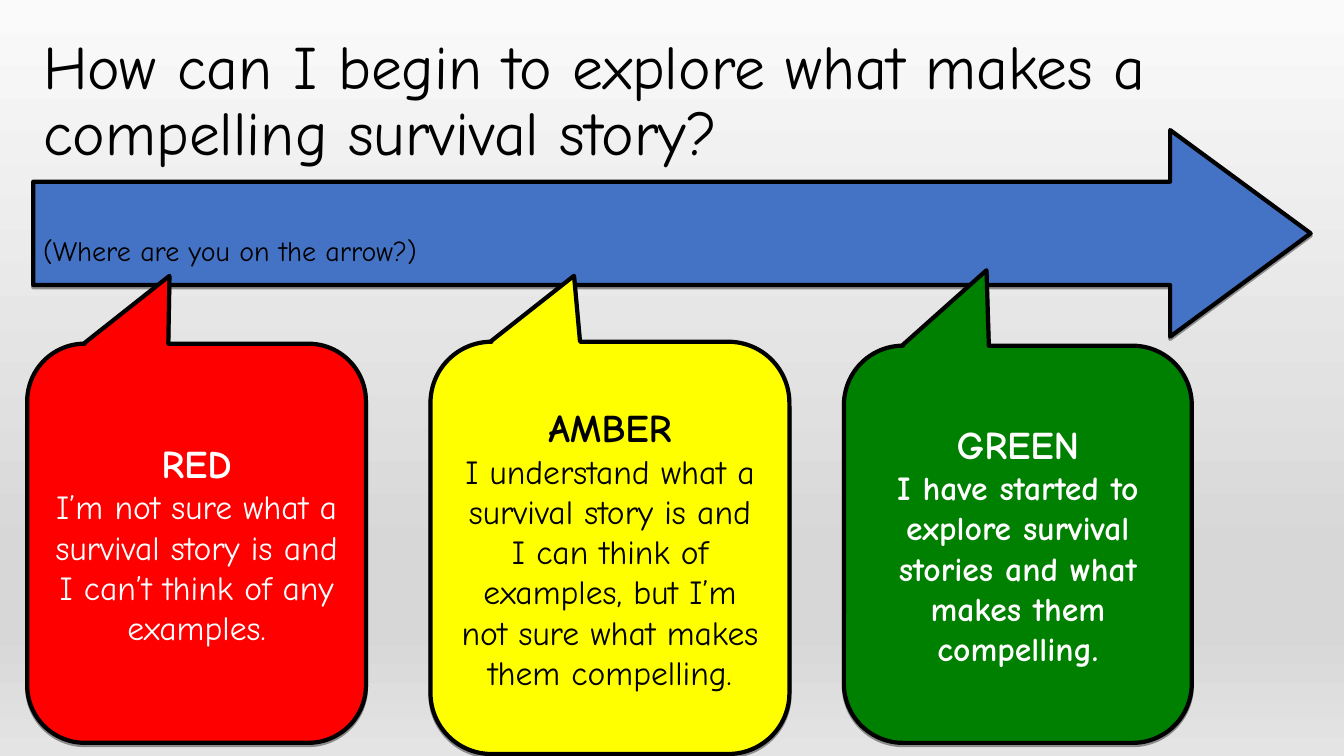
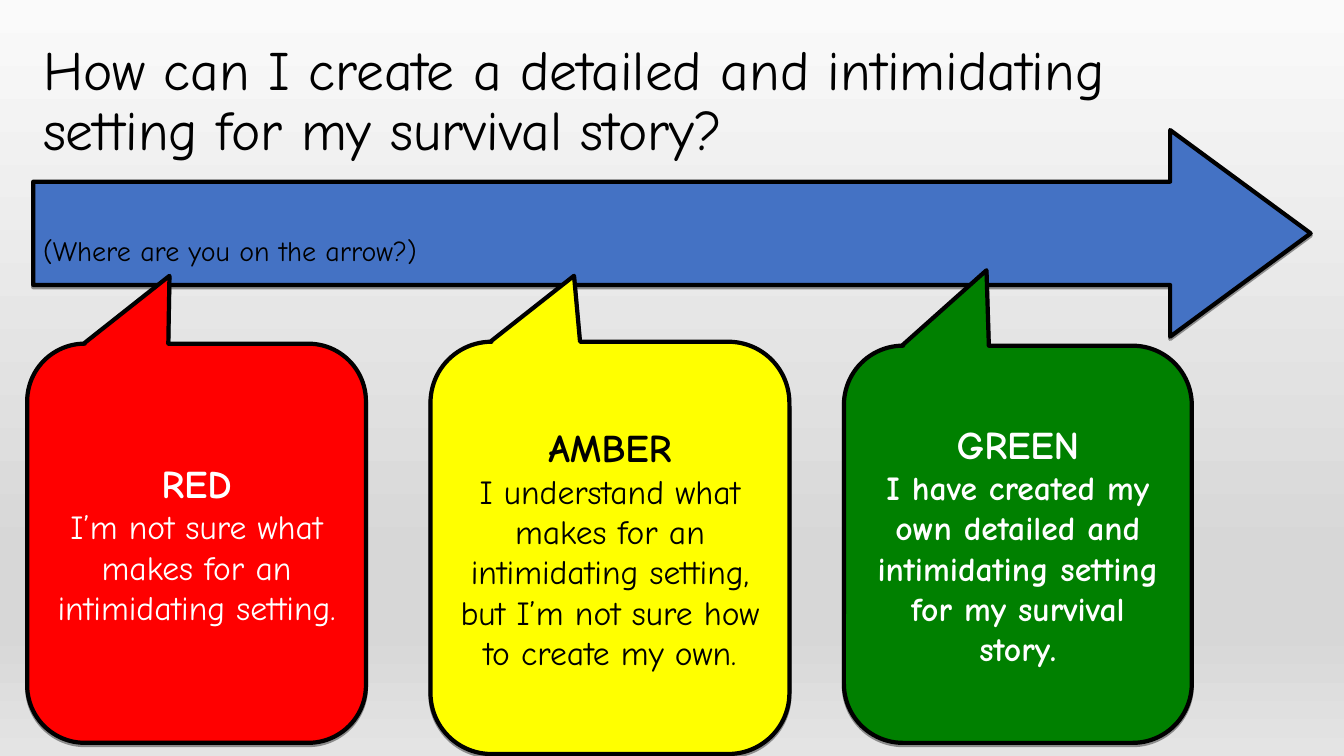
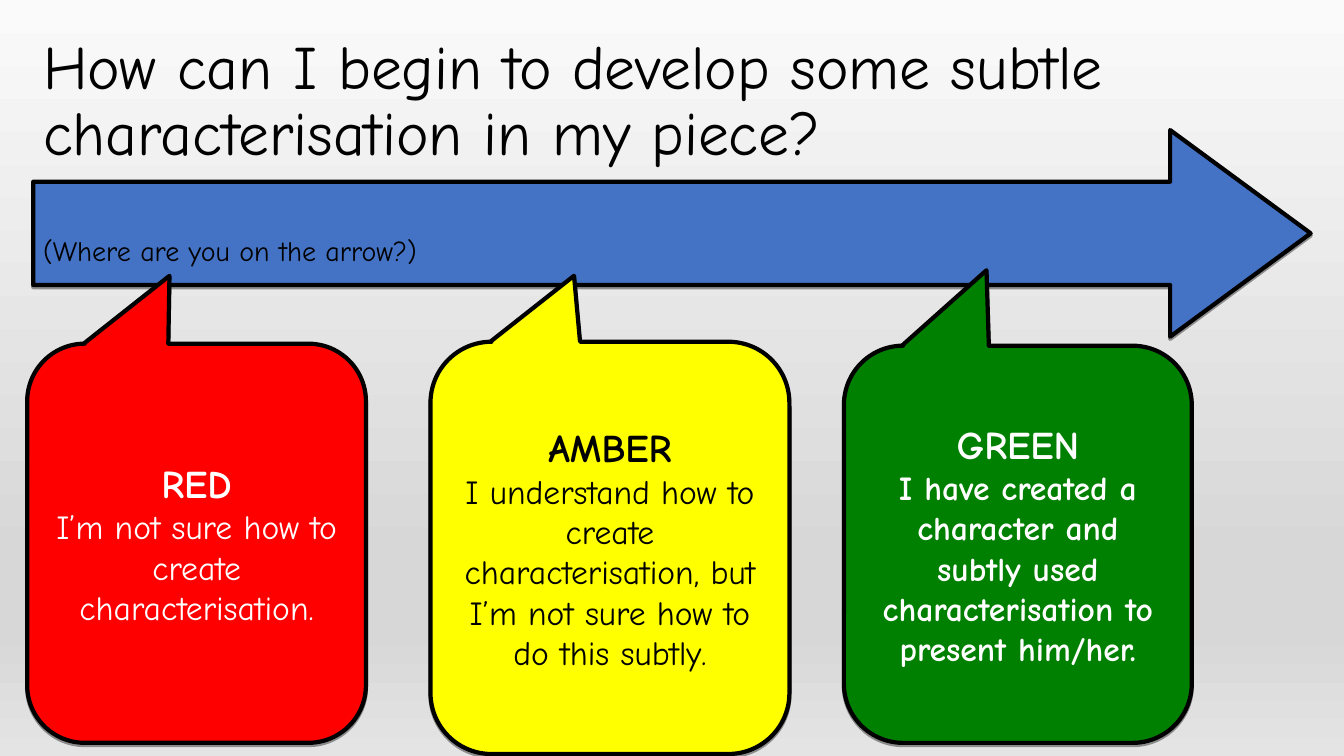
from lxml import etree
from pptx import Presentation
from pptx.dml.color import RGBColor
from pptx.enum.shapes import MSO_SHAPE
from pptx.enum.text import MSO_ANCHOR, PP_ALIGN
from pptx.oxml.ns import qn
from pptx.util import Inches, Pt

RIGHT_ARROW = MSO_SHAPE.RIGHT_ARROW
CALLOUT = MSO_SHAPE.ROUNDED_RECTANGULAR_CALLOUT
MIDDLE = MSO_ANCHOR.MIDDLE
LEFT, CENTER = PP_ALIGN.LEFT, PP_ALIGN.CENTER

FONT = "Comic Neue"
BLACK, WHITE, BLUE = "000000", "FFFFFF", "4472C4"
BACKGROUND_STOPS = [(0, "FAFAFA"), (74, "D7D7D7"), (83, "D7D7D7"), (100, "E4E4E4")]

ARROW_PROMPT = "(Where are you on the arrow?)"

# label, fill, text colour, bold body, (left, top, width, height), pointer tip
RATINGS = [
    ("RED", "FF0000", WHITE, False, (0.27, 3.41, 3.36, 3.96), (-0.08, -0.67)),
    ("AMBER", "FFFF00", BLACK, False, (4.27, 3.39, 3.56, 4.09), (-0.1, -0.66)),
    ("GREEN", "008000", WHITE, True, (8.37, 3.43, 3.45, 3.94), (-0.09, -0.69)),
]

# question, question size, statements in the order of RATINGS
LESSONS = [
    ("How can I begin to explore what makes a compelling survival story?", 44, [
        "I’m not sure what a survival story is and I can’t think of any examples.",
        "I understand what a survival story is and I can think of examples, "
        "but I’m not sure what makes them compelling.",
        "I have started to explore survival stories and what makes them compelling.",
    ]),
    ("How can I create a detailed and intimidating setting for my survival story?", 39.6, [
        "I’m not sure what makes for an intimidating setting.",
        "I understand what makes for an intimidating setting, "
        "but I’m not sure how to create my own.",
        "I have created my own detailed and intimidating setting for my survival story.",
    ]),
    ("How can I begin to develop some subtle characterisation in my piece?", 44, [
        "I’m not sure how to create characterisation.",
        "I understand how to create characterisation, "
        "but I’m not sure how to do this subtly.",
        "I have created a character and subtly used characterisation to present him/her.",
    ]),
]


def rgb(value):
    return RGBColor.from_string(value)


def add_color(parent, value):
    return etree.SubElement(parent, qn("a:srgbClr"), val=value)


def set_background(master):
    """Give the master, and so every slide, the grey gradient from top to bottom."""
    fill = master.background.fill
    fill.gradient()
    fill.gradient_angle = 270
    stops = master.element.find(".//" + qn("p:bg")).find(".//" + qn("a:gsLst"))
    for stop in list(stops):
        stops.remove(stop)
    for percent, color in BACKGROUND_STOPS:
        add_color(etree.SubElement(stops, qn("a:gs"), pos=str(percent * 1000)), color)


def write(paragraph, text, size, color, bold=False, align=LEFT):
    paragraph.text = text
    paragraph.alignment = align
    font = paragraph.font
    font.name, font.size, font.bold = FONT, Pt(size), bold
    font.color.rgb = rgb(color)


def add_outlined_shape(slide, kind, box, fill, adjustments):
    """Add a filled shape with a thick black outline and a thin shadow below it."""
    shape = slide.shapes.add_shape(kind, *map(Inches, box))
    for index, value in enumerate(adjustments):
        shape.adjustments[index] = value
    shape.fill.solid()
    shape.fill.fore_color.rgb = rgb(fill)
    shape.line.color.rgb = rgb(BLACK)
    shape.line.width = Pt(3)
    shape.shadow.inherit = False
    effects = shape.element.spPr.find(qn("a:effectLst"))
    shadow = etree.SubElement(effects, qn("a:outerShdw"), blurRad="0",
                              dist=str(Pt(1.6)), dir="5400000", rotWithShape="0")
    etree.SubElement(add_color(shadow, BLACK), qn("a:alpha"), val="38000")
    frame = shape.text_frame
    frame.word_wrap = True
    frame.vertical_anchor = MIDDLE
    return frame


def add_question(slide, question, size):
    box = slide.shapes.add_textbox(*map(Inches, (0.33, 0.29, 11.5, 1.45)))
    frame = box.text_frame
    frame.word_wrap = True
    frame.vertical_anchor = MIDDLE
    write(frame.paragraphs[0], question, size, BLACK)
    frame.paragraphs[0].line_spacing = 0.9


def add_arrow(slide):
    frame = add_outlined_shape(slide, RIGHT_ARROW, (0.33, 1.29, 12.67, 2.05), BLUE, (0.5, 0.68))
    frame.margin_top = Inches(0.38)
    write(frame.paragraphs[0], ARROW_PROMPT, 20, BLACK)


def add_rating(slide, rating, statement):
    label, fill, color, bold_body, box, tip = rating
    frame = add_outlined_shape(slide, CALLOUT, box, fill, (*tip, 0.17))
    write(frame.paragraphs[0], label, 28, color, True, CENTER)
    write(frame.add_paragraph(), statement, 24, color, bold_body, CENTER)


def main():
    prs = Presentation()
    prs.slide_width, prs.slide_height = Inches(13.33), Inches(7.5)
    set_background(prs.slide_master)
    blank = prs.slide_layouts[6]
    for question, size, statements in LESSONS:
        slide = prs.slides.add_slide(blank)
        add_question(slide, question, size)
        add_arrow(slide)
        for rating, statement in zip(RATINGS, statements):
            add_rating(slide, rating, statement)
    prs.save("out.pptx")


if __name__ == "__main__":
    main()
